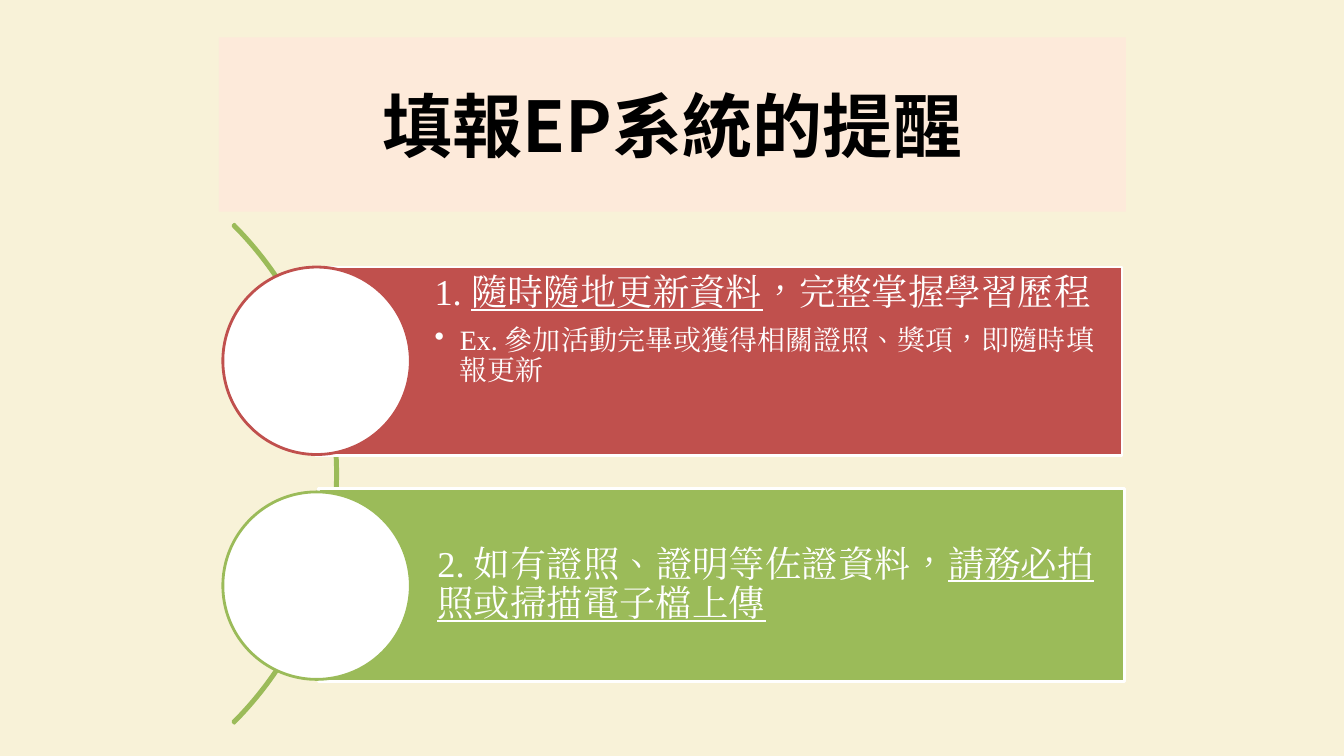
from dataclasses import dataclass

from lxml.etree import SubElement
from pptx import Presentation
from pptx.dml.color import RGBColor as Color
from pptx.enum.lang import MSO_LANGUAGE_ID as Language
from pptx.enum.shapes import MSO_SHAPE as Shape
from pptx.enum.text import MSO_ANCHOR as Anchor, PP_ALIGN as Align
from pptx.oxml.ns import qn
from pptx.util import Inches, Pt

SLIDE_WIDTH, SLIDE_HEIGHT = Inches(13.33), Inches(7.5)


@dataclass(frozen=True)
class Theme:
    cream: str = "F8F2D8"
    peach: str = "FDEADA"
    red: str = "C0504D"
    green: str = "9BBB59"
    white: str = "FFFFFF"
    black: str = "000000"
    title_font: str = "Noto Sans CJK SC"
    body_font: str = "Times New Roman"
    title_size: int = 50
    point_size: int = 26
    example_size: int = 20
    line_width: int = 2


THEME = Theme()


def add_block(slide, kind, area, fill=None, line=None):
    """Add a preset shape; area is left, top, width, height in percent of the slide."""
    sides = (SLIDE_WIDTH, SLIDE_HEIGHT) * 2
    lengths = [round(side * share / 100) for side, share in zip(sides, area)]
    shape = slide.shapes.add_shape(kind, *lengths)
    shape.shadow.inherit = False
    if fill:
        shape.fill.solid()
        shape.fill.fore_color.rgb = Color.from_string(fill)
    else:
        shape.fill.background()
    if line:
        shape.line.color.rgb = Color.from_string(line)
        shape.line.width = Pt(THEME.line_width)
    else:
        shape.line.fill.background()
    return shape


def set_frame(shape, anchor, **margins):
    frame = shape.text_frame
    formats = {"word_wrap": True, "vertical_anchor": anchor, **margins}
    for name, value in formats.items():
        setattr(frame, name, value)
    return frame


def add_run(paragraph, text, typeface, color, **formats):
    run = paragraph.add_run()
    run.text = text
    formats |= {"name": typeface, "language_id": Language.TRADITIONAL_CHINESE}
    for name, value in formats.items():
        setattr(run.font, name, value)
    run.font.color.rgb = Color.from_string(color)
    latin = run.font._element.find(qn("a:latin"))
    east_asian = latin.makeelement(qn("a:ea"), {"typeface": typeface})
    latin.addnext(east_asian)


def add_bullet(paragraph):
    properties = paragraph._p.get_or_add_pPr()
    for name, value in {"marL": Inches(0.25), "indent": -Inches(0.25), "lvl": 1}.items():
        properties.set(name, str(value))
    SubElement(properties, qn("a:buChar"), char="•")


def write_line(paragraph, pieces, size, space_after):
    """Fill a paragraph from (text, underlined) pieces."""
    formats = {"alignment": Align.LEFT, "line_spacing": 0.9, "space_after": Pt(space_after)}
    for name, value in formats.items():
        setattr(paragraph, name, value)
    for text, underlined in pieces:
        add_run(paragraph, text, THEME.body_font, THEME.white,
                size=Pt(size), underline=underlined)


def add_reminder(slide, bar_area, circle_area, color, anchor, point, example=None):
    bar = add_block(slide, Shape.RECTANGLE, bar_area, color, THEME.white)
    inset = Inches(0.07)
    frame = set_frame(bar, anchor, margin_left=Inches(1.18), margin_top=inset,
                      margin_right=inset, margin_bottom=inset)
    write_line(frame.paragraphs[0], point, THEME.point_size, 9)
    if example:
        paragraph = frame.add_paragraph()
        add_bullet(paragraph)
        write_line(paragraph, [(example, False)], THEME.example_size, 3)
    add_block(slide, Shape.OVAL, circle_area, THEME.white, color)


def add_title(slide, text):
    banner = add_block(slide, Shape.RECTANGLE, (16.28, 4.93, 67.5, 23.07), THEME.peach)
    paragraph = set_frame(banner, Anchor.MIDDLE).paragraphs[0]
    paragraph.alignment = Align.CENTER
    add_run(paragraph, text, THEME.title_font, THEME.black,
            size=Pt(THEME.title_size), bold=True)


def add_arc(slide):
    """Draw the thin arc, from 45 degrees above to 45 degrees below the horizontal."""
    arc = add_block(slide, Shape.BLOCK_ARC, (-27.38, 16, 52.5, 93.33), line=THEME.green)
    for index, value in enumerate((189, 27, 0.003)):
        arc.adjustments[index] = value


def main():
    presentation = Presentation()
    presentation.slide_width, presentation.slide_height = SLIDE_WIDTH, SLIDE_HEIGHT
    slide = presentation.slides.add_slide(presentation.slide_layouts[6])
    background = slide.background.fill
    background.solid()
    background.fore_color.rgb = Color.from_string(THEME.cream)

    add_arc(slide)
    add_reminder(
        slide, (23.48, 35.33, 60, 24.93), (16.58, 35.33, 13.95, 24.8),
        THEME.red, Anchor.TOP,
        [("1. ", False), ("隨時隨地更新資料", True), ("，完整掌握學習歷程", False)],
        "Ex. 參加活動完畢或獲得相關證照、獎項，即隨時填報更新",
    )
    add_reminder(
        slide, (23.7, 64.67, 60, 25.47), (16.58, 65.07, 13.95, 24.8),
        THEME.green, Anchor.MIDDLE,
        [("2. 如有證照、證明等佐證資料，", False), ("請務必拍照或掃描電子檔上傳", True)],
    )
    add_title(slide, "填報EP系統的提醒")
    presentation.save("out.pptx")


if __name__ == "__main__":
    main()
